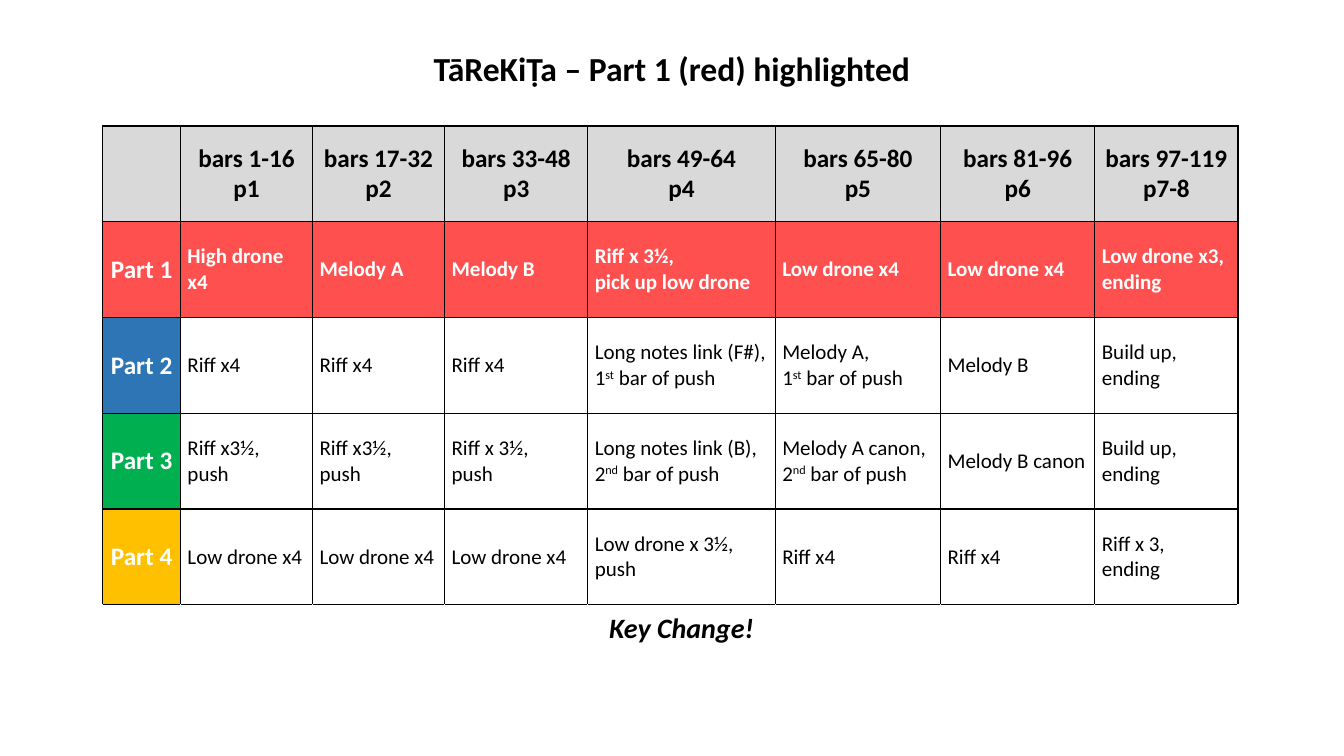
from lxml import etree
from pptx import Presentation
from pptx import util as u
from pptx.dml.color import RGBColor
from pptx.enum import text
from pptx.oxml import ns

BLACK = RGBColor(0, 0, 0)
WHITE = RGBColor(0xFF, 0xFF, 0xFF)
GREY = RGBColor(0xD9, 0xD9, 0xD9)
RED = RGBColor(0xFF, 0x50, 0x50)
BLUE = RGBColor(0x2E, 0x75, 0xB6)
GREEN = RGBColor(0x00, 0xB0, 0x50)
AMBER = RGBColor(0xFF, 0xC0, 0x00)

FONT = "Calibri"
WIDTH, HEIGHT = u.Inches(13.33), u.Inches(7.5)
COLUMNS = [0.77, 1.31, 1.31, 1.42, 1.86, 1.64, 1.53, 1.42]
ROW = 0.95
NOTE_COLUMN = 4
HEADINGS = [
    "", "bars 1-16\np1", "bars 17-32\np2", "bars 33-48\np3", "bars 49-64\np4",
    "bars 65-80\np5", "bars 81-96\np6", "bars 97-119\np7-8",
]
PARTS = [
    (RED, ["High drone x4", "Melody A", "Melody B", "Riff x 3½,\npick up low drone",
           "Low drone x4", "Low drone x4", "Low drone x3, ending"]),
    (BLUE, ["Riff x4", "Riff x4", "Riff x4", "Long notes link (F#), 1^st^ bar of push",
            "Melody A,\n1^st^ bar of push", "Melody B", "Build up, ending"]),
    (GREEN, ["Riff x3½, push", "Riff x3½, push", "Riff x 3½,\npush",
             "Long notes link (B), 2^nd^ bar of push",
             "Melody A canon, 2^nd^ bar of push", "Melody B canon", "Build up, ending"]),
    (AMBER, ["Low drone x4", "Low drone x4", "Low drone x4", "Low drone x 3½, push",
             "Riff x4", "Riff x4", "Riff x 3,\nending"]),
]


def write(frame, words, size, color=BLACK, bold=True, italic=False, centred=True):
    for index, line in enumerate(words.split("\n")):
        para = frame.add_paragraph() if index else frame.paragraphs[0]
        para.alignment = text.PP_ALIGN.CENTER if centred else text.PP_ALIGN.LEFT
        font = para.font
        font.name, font.size = FONT, u.Pt(size)
        font.bold, font.italic = bold, italic
        font.color.rgb = color
        for position, piece in enumerate(line.split("^")):
            if piece:
                span = para.add_run()
                span.text = piece
                if position % 2:
                    span._r.get_or_add_rPr().set("baseline", "30000")


def border(cell, sides):
    properties = cell._tc.get_or_add_tcPr()
    for side in sides:
        line = etree.SubElement(properties, ns.qn("a:ln" + side), w=str(u.Pt(1)))
        fill = etree.SubElement(line, ns.qn("a:solidFill"))
        etree.SubElement(fill, ns.qn("a:srgbClr"), val=str(BLACK))


def format_cell(cell, fill=None, sides="LRTB"):
    cell.margin_left = cell.margin_right = u.Inches(0.07)
    cell.margin_top = cell.margin_bottom = 0
    cell.vertical_anchor = text.MSO_ANCHOR.MIDDLE
    border(cell, sides)
    if fill is None:
        cell.fill.background()
    else:
        cell.fill.solid()
        cell.fill.fore_color.rgb = fill


def add_title(page, words):
    title = page.shapes.title
    title.left, title.top = int(WIDTH * 0.31), int(HEIGHT * 0.056)
    title.width, title.height = int(WIDTH * 0.38), int(HEIGHT * 0.067)
    title.text_frame.vertical_anchor = text.MSO_ANCHOR.MIDDLE
    title.text_frame.word_wrap = False
    write(title.text_frame, words, 24)


def add_parts_table(page):
    rows = len(PARTS) + 2
    frame = page.shapes.add_table(
        rows, len(COLUMNS), u.Inches(1.02), u.Inches(1.25),
        u.Inches(sum(COLUMNS)), u.Inches(ROW * (rows - 0.5)))
    table = frame.table
    table.first_row = table.horz_banding = False
    for column, width in zip(table.columns, COLUMNS):
        column.width = u.Inches(width)
    for index, row in enumerate(table.rows):
        row.height = u.Inches(ROW if index < rows - 1 else ROW / 2)

    for column, heading in enumerate(HEADINGS):
        cell = table.cell(0, column)
        format_cell(cell, GREY)
        write(cell.text_frame, heading, 18)
        format_cell(table.cell(rows - 1, column), sides="T")

    for number, (color, entries) in enumerate(PARTS, 1):
        label = table.cell(number, 0)
        format_cell(label, color)
        write(label.text_frame, f"Part {number}", 18, WHITE)
        highlighted = color == RED
        for column, entry in enumerate(entries, 1):
            cell = table.cell(number, column)
            format_cell(cell, RED if highlighted else None)
            write(cell.text_frame, entry, 15, WHITE if highlighted else BLACK,
                  bold=highlighted, centred=False)

    note = table.cell(rows - 1, NOTE_COLUMN)
    write(note.text_frame, "Key Change!", 20, italic=True)


def main():
    deck = Presentation()
    deck.slide_width, deck.slide_height = WIDTH, HEIGHT
    page = deck.slides.add_slide(deck.slide_layouts[5])
    add_title(page, "TāReKiṬa – Part 1 (red) highlighted")
    add_parts_table(page)
    deck.save("out.pptx")


if __name__ == "__main__":
    main()
